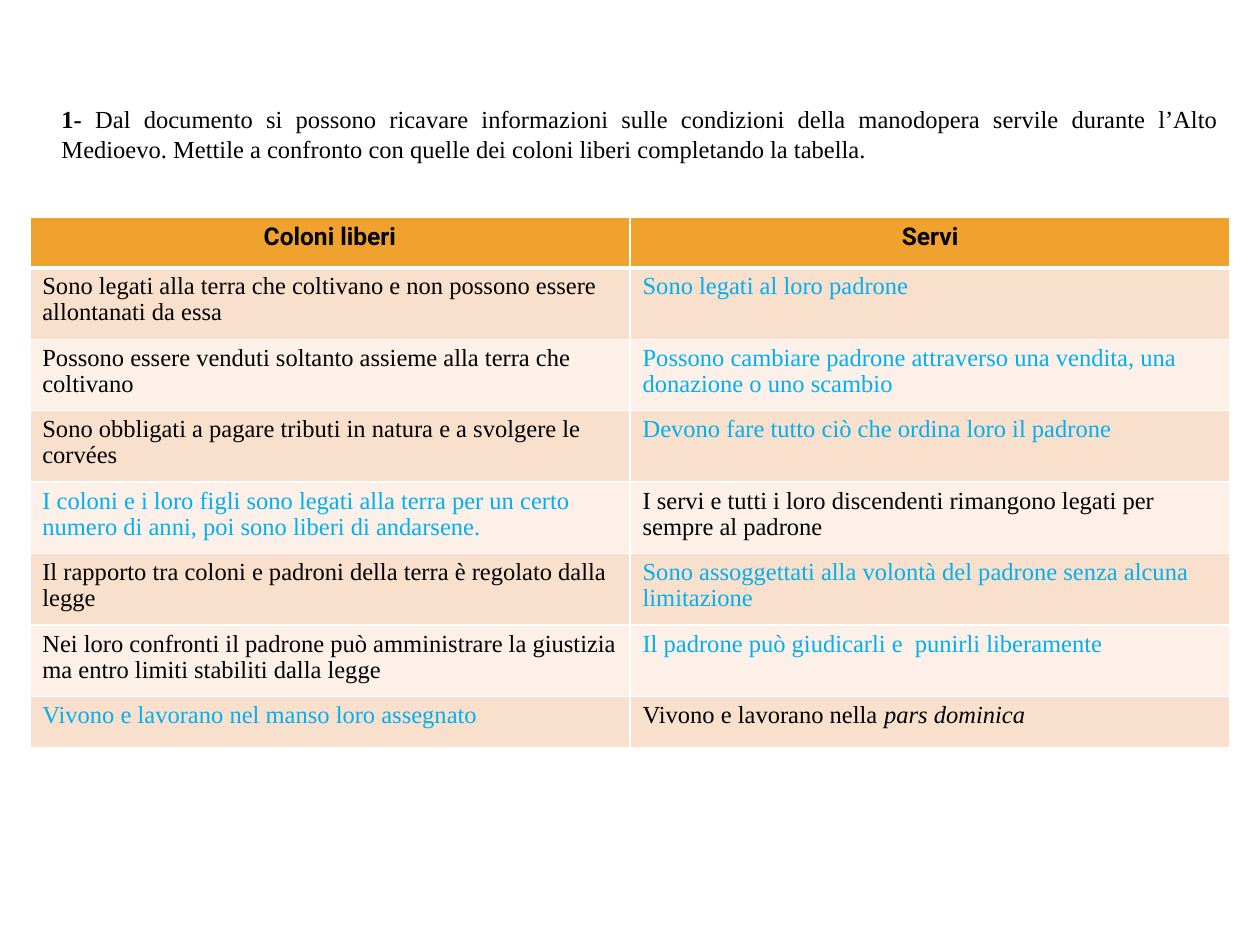
"""Build a slide comparing free settlers and serfs in a two-column table."""
from dataclasses import dataclass

from lxml.etree import SubElement
from pptx import Presentation
from pptx.dml.color import RGBColor
from pptx.enum.text import PP_ALIGN
from pptx.oxml.ns import qn
from pptx.util import Cm, Pt


@dataclass(frozen=True)
class Theme:
    body_font: str = "Times New Roman"
    head_font: str = "Roboto"
    size: float = 14
    text: str = "000000"
    answer: str = "00B0F0"
    head_fill: str = "F0A22E"
    bands: tuple[str, str] = ("F9E0CD", "FCF0E8")
    border: str = "FFFFFF"
    thin: float = 1
    thick: float = 3
    cell_spacing: float = 0.96


@dataclass(frozen=True)
class Entry:
    text: str
    answer: bool = False
    italic: str = ""


@dataclass(frozen=True)
class Row:
    left: Entry
    right: Entry
    height: float = 1.44


THEME = Theme()
HEADERS = ("Coloni liberi", "Servi")
HEAD_HEIGHT = 1.03
ROWS = (
    Row(Entry("Sono legati alla terra che coltivano e non possono essere allontanati da essa"),
        Entry("Sono legati al loro padrone", True)),
    Row(Entry("Possono essere venduti soltanto assieme alla terra che coltivano"),
        Entry("Possono cambiare padrone attraverso una vendita, una donazione o uno scambio", True)),
    Row(Entry("Sono obbligati a pagare tributi in natura e a svolgere le corvées"),
        Entry("Devono fare tutto ciò che ordina loro il padrone", True)),
    Row(Entry("I coloni e i loro figli sono legati alla terra per un certo numero di anni, "
              "poi sono liberi di andarsene.", True),
        Entry("I servi e tutti i loro discendenti rimangono legati per sempre al padrone")),
    Row(Entry("Il rapporto tra coloni e padroni della terra è regolato dalla legge"),
        Entry("Sono assoggettati alla volontà del padrone senza alcuna limitazione", True)),
    Row(Entry("Nei loro confronti il padrone può amministrare la giustizia "
              "ma entro limiti stabiliti dalla legge"),
        Entry("Il padrone può giudicarli e  punirli liberamente", True)),
    Row(Entry("Vivono e lavorano nel manso loro assegnato", True),
        Entry("Vivono e lavorano nella ", italic="pars dominica"), HEAD_HEIGHT),
)


def set_font(p, name: str, color: str, bold: bool = False) -> None:
    p.font.name = name
    p.font.size = Pt(THEME.size)
    p.font.bold = bold
    p.font.color.rgb = RGBColor.from_string(color)


def style_cell(cell, fill: str, top: float, bottom: float) -> None:
    tcPr = cell._tc.get_or_add_tcPr()
    for side, width in zip("LRTB", (THEME.thin, THEME.thin, top, bottom)):
        ln = SubElement(tcPr, qn(f"a:ln{side}"), w=str(Pt(width)))
        SubElement(SubElement(ln, qn("a:solidFill")), qn("a:srgbClr"), val=THEME.border)
    cell.fill.solid()
    cell.fill.fore_color.rgb = RGBColor.from_string(fill)


def add_question(s) -> None:
    tf = s.shapes.add_textbox(Cm(0.99), Cm(1.98), Cm(23.83), Cm(1.45)).text_frame
    tf.word_wrap = True
    p = tf.paragraphs[0]
    p.alignment = PP_ALIGN.JUSTIFY
    set_font(p, THEME.body_font, THEME.text)
    r = p.add_run()
    r.text = "1- "
    r.font.bold = True
    p.add_run().text = (
        "Dal documento si possono ricavare informazioni sulle condizioni della manodopera "
        "servile durante l’Alto Medioevo. Mettile a confronto con quelle dei coloni liberi "
        "completando la tabella.")


def fill_header(cell, text: str) -> None:
    style_cell(cell, THEME.head_fill, THEME.thin, THEME.thick)
    p = cell.text_frame.paragraphs[0]
    p.alignment = PP_ALIGN.CENTER
    set_font(p, THEME.head_font, THEME.text, True)
    p.add_run().text = text


def fill_entry(cell, entry: Entry, index: int) -> None:
    top = THEME.thin if index else THEME.thick
    style_cell(cell, THEME.bands[index % 2], top, THEME.thin)
    p = cell.text_frame.paragraphs[0]
    p.line_spacing = THEME.cell_spacing
    set_font(p, THEME.body_font, THEME.answer if entry.answer else THEME.text)
    p.add_run().text = entry.text
    if entry.italic:
        r = p.add_run()
        r.text = entry.italic
        r.font.italic = True


def add_comparison(s) -> None:
    heights = [HEAD_HEIGHT, *(row.height for row in ROWS)]
    table = s.shapes.add_table(len(heights), len(HEADERS), Cm(0.6), Cm(4.37),
                               Cm(24.2), Cm(sum(heights))).table
    for row, height in zip(table.rows, heights):
        row.height = Cm(height)
    for col, text in enumerate(HEADERS):
        fill_header(table.cell(0, col), text)
    for i, row in enumerate(ROWS):
        for col, entry in enumerate((row.left, row.right)):
            fill_entry(table.cell(i + 1, col), entry, i)


def main() -> None:
    prs = Presentation()
    prs.slide_width, prs.slide_height = Cm(25.4), Cm(19.05)
    s = prs.slides.add_slide(prs.slide_layouts[6])
    add_question(s)
    add_comparison(s)
    prs.save("out.pptx")


if __name__ == "__main__":
    main()
